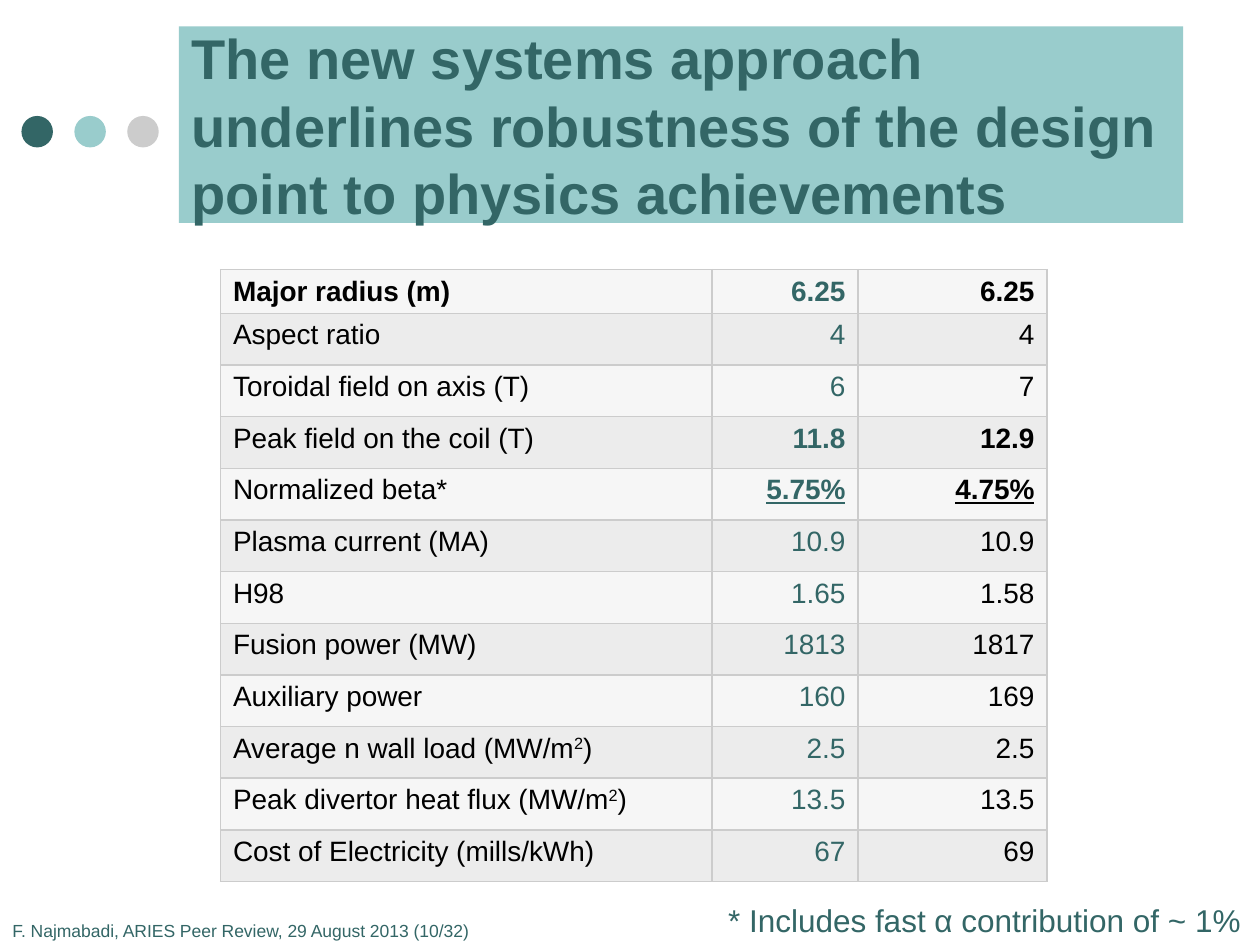
from dataclasses import dataclass

from lxml.etree import SubElement
from pptx import Presentation
from pptx.dml.color import RGBColor
from pptx.enum.shapes import MSO_SHAPE
from pptx.enum.text import MSO_ANCHOR, MSO_AUTO_SIZE, PP_ALIGN
from pptx.oxml.ns import qn
from pptx.util import Inches, Pt


@dataclass(frozen=True)
class Theme:
    font: str = "Arial"
    teal: str = "336666"
    aqua: str = "99CCCC"
    gray: str = "CCCCCC"
    black: str = "000000"
    bands: tuple = ("F6F6F6", "ECECEC")
    title: int = 32
    note: int = 18
    body: int = 16
    footer: int = 10


theme = Theme()


def style(p, size, color, bold=False, underline=False):
    for r in p.runs:
        r.font.name = theme.font
        r.font.size = Pt(size)
        r.font.bold = bold
        r.font.underline = underline
        r.font.color.rgb = RGBColor.from_string(color)


def add_borders(cell):
    tcPr = cell._tc.get_or_add_tcPr()
    for i, side in enumerate(("lnL", "lnR", "lnT", "lnB")):
        ln = tcPr.makeelement(qn(f"a:{side}"), {"w": str(Pt(1))})
        fill = SubElement(ln, qn("a:solidFill"))
        SubElement(fill, qn("a:srgbClr"), val=theme.gray)
        tcPr.insert(i, ln)


prs = Presentation()
prs.slide_width, prs.slide_height = Inches(10), Inches(7.5)
s = prs.slides.add_slide(prs.slide_layouts[5])

for i, color in enumerate((theme.teal, theme.aqua, theme.gray)):
    dot = s.shapes.add_shape(
        MSO_SHAPE.OVAL, Inches(0.17 + 0.42 * i), Inches(0.92), Inches(0.25), Inches(0.25)
    )
    dot.shadow.inherit = False
    dot.fill.solid()
    dot.fill.fore_color.rgb = RGBColor.from_string(color)
    dot.line.fill.background()

title = s.shapes.title
title.left, title.top = Inches(1.42), Inches(0.21)
title.width, title.height = Inches(7.97), Inches(1.56)
title.fill.solid()
title.fill.fore_color.rgb = RGBColor.from_string(theme.aqua)
tf = title.text_frame
tf.text = "The new systems approach underlines robustness of the design point to physics achievements"
tf.word_wrap = True
tf.auto_size = MSO_AUTO_SIZE.NONE
tf.vertical_anchor = MSO_ANCHOR.MIDDLE
p = tf.paragraphs[0]
p.alignment = PP_ALIGN.LEFT
style(p, theme.title, theme.teal, bold=True)

rows = [
    ("Major radius (m)", "6.25", "6.25"),
    ("Aspect ratio", "4", "4"),
    ("Toroidal field on axis (T)", "6", "7"),
    ("Peak field on the coil (T)", "11.8", "12.9"),
    ("Normalized beta*", "5.75%", "4.75%"),
    ("Plasma current (MA)", "10.9", "10.9"),
    ("H98", "1.65", "1.58"),
    ("Fusion power (MW)", "1813", "1817"),
    ("Auxiliary power", "160", "169"),
    ("Average n wall load (MW/m^2)", "2.5", "2.5"),
    ("Peak divertor heat flux (MW/m^2)", "13.5", "13.5"),
    ("Cost of Electricity (mills/kWh)", "67", "69"),
]
bold_values = {"Major radius (m)", "Peak field on the coil (T)", "Normalized beta*"}
column_colors = (theme.black, theme.teal, theme.black)

table = s.shapes.add_table(
    len(rows), 3, Inches(1.75), Inches(2.14), Inches(6.56), Inches(4.83)
).table
for column, width in zip(table.columns, (3.9, 1.16, 1.5)):
    column.width = Inches(width)
for i, row in enumerate(rows):
    table.rows[i].height = Inches(0.41 if i else 0.34)
    for j, text in enumerate(row):
        cell = table.cell(i, j)
        cell.fill.solid()
        cell.fill.fore_color.rgb = RGBColor.from_string(theme.bands[i % 2])
        add_borders(cell)
        p = cell.text_frame.paragraphs[0]
        p.alignment = PP_ALIGN.RIGHT if j else PP_ALIGN.LEFT
        base, caret, rest = text.partition("^")
        p.add_run().text = base
        if caret:
            r = p.add_run()
            r.text = rest[0]
            r.font._element.set("baseline", "30000")
            p.add_run().text = rest[1:]
        bold = i == 0 or (j > 0 and row[0] in bold_values)
        style(p, theme.body, column_colors[j], bold, j > 0 and row[0] == "Normalized beta*")

captions = [
    ("F. Najmabadi, ARIES Peer Review, 29 August 2013 (10/32)",
     0, 7.25, 5.63, 0.25, theme.footer, True),
    ("* Includes fast α contribution of ~ 1%",
     5.68, 7.1, 4.32, 0.4, theme.note, False),
]
for text, left, top, width, height, size, wrap in captions:
    tb = s.shapes.add_textbox(Inches(left), Inches(top), Inches(width), Inches(height))
    tf = tb.text_frame
    tf.text = text
    tf.word_wrap = wrap
    tf.auto_size = MSO_AUTO_SIZE.NONE if wrap else MSO_AUTO_SIZE.SHAPE_TO_FIT_TEXT
    style(tf.paragraphs[0], size, theme.teal)

prs.save("out.pptx")
